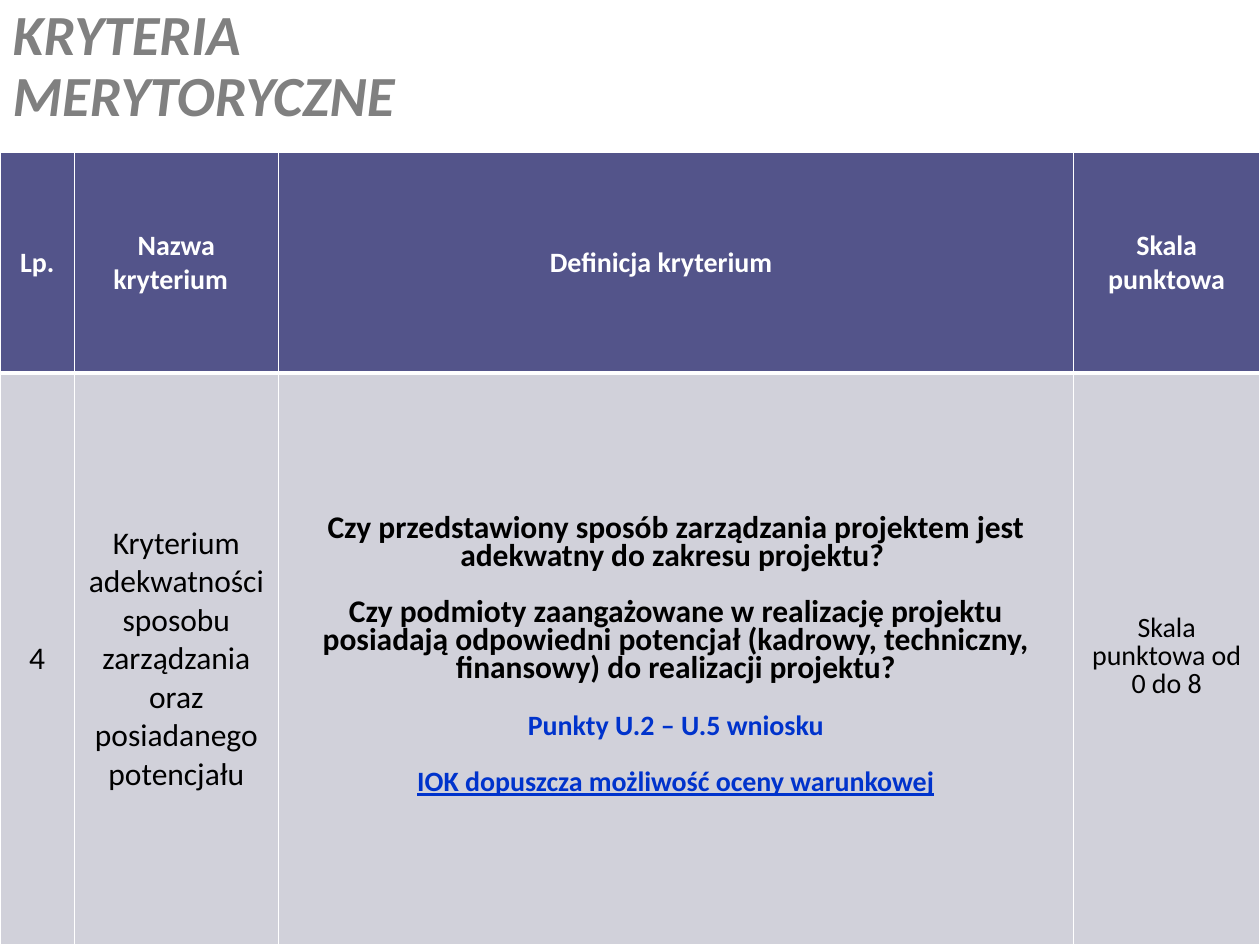
from pptx import Presentation
from pptx.dml.color import RGBColor
from pptx.enum.text import MSO_ANCHOR, MSO_AUTO_SIZE, PP_ALIGN
from pptx.oxml.xmlchemy import OxmlElement
from pptx.util import Inches, Pt

COLORS = {
    "title": "808080", "header": "53548A", "body": "D1D1DA",
    "white": "FFFFFF", "black": "000000", "blue": "0033CC",
}
TITLE = ["KRYTERIA", "MERYTORYCZNE"]
HEADERS = ["Lp.", "Nazwa kryterium \t", "Definicja kryterium \t", "Skala punktowa"]
NUMBER = "4"
CRITERION = "Kryterium adekwatności sposobu zarządzania oraz posiadanego potencjału"
QUESTIONS = [
    "Czy przedstawiony sposób zarządzania projektem jest adekwatny do zakresu projektu? ",
    "Czy podmioty zaangażowane w realizację projektu posiadają odpowiedni potencjał "
    "(kadrowy, techniczny, finansowy) do realizacji projektu?",
]
REFERENCE = "Punkty U.2 – U.5 wniosku"
CONDITION = "IOK dopuszcza możliwość oceny warunkowej"
SCALE = "Skala punktowa od 0 do 8"

COLUMN_WIDTHS = [0.59, 1.62, 6.31, 1.48]
ROW_HEIGHTS = [1.75, 4.54]
TABLE_TOP = 1.21


def write(frame, text, size=18, color="black", bold=False, italic=False,
          underline=False, align=PP_ALIGN.CENTER, line=None, before=0, after=0):
    """Fill the empty first paragraph of a frame, or append a new one."""
    first = not frame.text
    paragraph = frame.paragraphs[0] if first else frame.add_paragraph()
    paragraph.alignment = align
    paragraph.line_spacing = line
    paragraph.space_before = Pt(0 if first else before)
    paragraph.space_after = Pt(after)
    run = paragraph.add_run()
    run.text = text
    font = run.font
    font.name, font.size = "Calibri", Pt(size)
    font.bold, font.italic, font.underline = bold, italic, underline
    font.color.rgb = RGBColor.from_string(COLORS[color])


def set_borders(cell, **widths):
    properties = cell._tc.get_or_add_tcPr()
    for position, side in enumerate(("L", "R", "T", "B")):
        border = OxmlElement(f"a:ln{side}")
        border.set("w", str(Pt(widths.get(side, 1))))
        fill = OxmlElement("a:solidFill")
        color = OxmlElement("a:srgbClr")
        color.set("val", COLORS["white"])
        fill.append(color)
        border.append(fill)
        properties.insert(position, border)


def style_cell(cell, fill, **border_widths):
    cell.fill.solid()
    cell.fill.fore_color.rgb = RGBColor.from_string(COLORS[fill])
    cell.vertical_anchor = MSO_ANCHOR.MIDDLE
    set_borders(cell, **border_widths)


presentation = Presentation()
presentation.slide_width, presentation.slide_height = Inches(10), Inches(7.5)
slide = presentation.slides.add_slide(presentation.slide_layouts[5])

# Title
title = slide.shapes.title
title.left, title.top = Inches(0), Inches(0)
title.width, title.height = Inches(9.5), Inches(1.07)
title.text_frame.word_wrap = True
title.text_frame.auto_size = MSO_AUTO_SIZE.NONE
title.text_frame.vertical_anchor = MSO_ANCHOR.MIDDLE
for title_line in TITLE:
    write(title.text_frame, title_line, size=32.4, color="title", bold=True,
          italic=True, align=PP_ALIGN.LEFT, line=0.9)

# Criteria table
criteria = slide.shapes.add_table(
    len(ROW_HEIGHTS), len(COLUMN_WIDTHS), Inches(0), Inches(TABLE_TOP),
    Inches(sum(COLUMN_WIDTHS)), Inches(sum(ROW_HEIGHTS))).table
for column, width in zip(criteria.columns, COLUMN_WIDTHS):
    column.width = Inches(width)
for row, height in zip(criteria.rows, ROW_HEIGHTS):
    row.height = Inches(height)

# Header row
for cell, header in zip(criteria.rows[0].cells, HEADERS):
    style_cell(cell, "header", B=3)
    write(cell.text_frame, header, size=16, color="white", bold=True)

# Criterion row
for cell in criteria.rows[1].cells:
    style_cell(cell, "body", T=3)
number, criterion, definition, scale = criteria.rows[1].cells
for cell in (criterion, definition, scale):
    cell.margin_left = cell.margin_right = Inches(0.07)
    cell.margin_top = cell.margin_bottom = Inches(0)

write(number.text_frame, NUMBER)
write(criterion.text_frame, CRITERION)
spacing = {"line": Pt(16), "before": 10}
for question in QUESTIONS:
    write(definition.text_frame, question, bold=True, after=6, **spacing)
write(definition.text_frame, REFERENCE, size=16, color="blue", bold=True,
      after=6, **spacing)
write(definition.text_frame, CONDITION, size=16, color="blue", bold=True,
      underline=True, **spacing)
write(scale.text_frame, SCALE, size=16, **spacing)

presentation.save("out.pptx")
